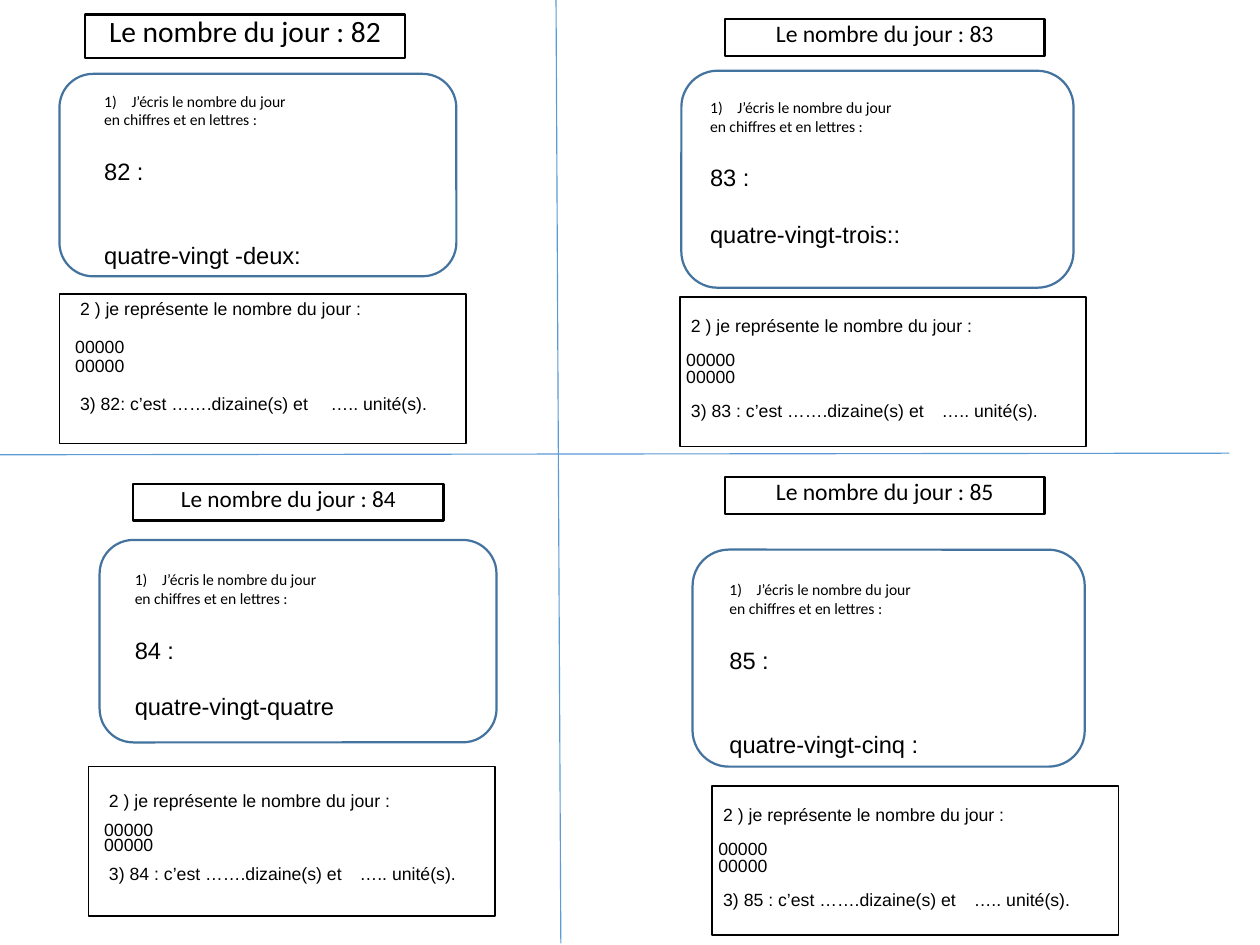
from lxml import etree
from pptx import Presentation
from pptx.dml.color import RGBColor
from pptx.enum.shapes import MSO_CONNECTOR, MSO_SHAPE
from pptx.enum.text import MSO_ANCHOR, PP_ALIGN
from pptx.oxml.ns import qn
from pptx.util import Inches, Pt

BLACK = RGBColor(0x00, 0x00, 0x00)
WHITE = RGBColor(0xFF, 0xFF, 0xFF)
FRAME_BLUE = RGBColor(0x43, 0x73, 0x9E)
DIVIDER_BLUE = RGBColor(0x5B, 0x9B, 0xD5)

CARDS = [
    {"number": 82, "words": "quatre-vingt -deux:", "words_gap": 25,
     "title": (0.53, 0.09, 1.99, 0.27), "title_size": 13.2, "title_spacing": 0.7,
     "title_inset": (0.1, 0.05), "frame": (0.37, 0.46, 2.47, 1.26),
     "writing": (0.55, 0.52, 1.81, 1.05), "box": (0.37, 1.83, 2.53, 0.93),
     "box_spacing": 0.9, "box_inset": (0.1, 0.18), "colon": ":"},
    {"number": 83, "words": "quatre-vingt-trois::", "words_gap": 12.5,
     "title": (4.51, 0.12, 1.99, 0.23), "title_size": 10.6, "title_spacing": 0.9,
     "title_inset": (0.04, 0.02), "frame": (4.24, 0.44, 2.44, 1.35),
     "writing": (4.32, 0.56, 1.81, 0.87), "box": (4.23, 1.85, 2.53, 0.93),
     "box_spacing": 0.8, "box_inset": (0.04, 0.16), "colon": " :"},
    {"number": 84, "words": "quatre-vingt-quatre", "words_gap": 12.5,
     "title": (0.83, 3.01, 1.93, 0.23), "title_size": 10.4, "title_spacing": 0.7,
     "title_inset": (0.1, 0.05), "frame": (0.62, 3.36, 2.47, 1.26),
     "writing": (0.74, 3.5, 1.81, 0.87), "box": (0.55, 4.77, 2.53, 0.93),
     "box_spacing": 0.7, "box_inset": (0.1, 0.2), "colon": " :"},
    {"number": 85, "words": "quatre-vingt-cinq :", "words_gap": 25,
     "title": (4.51, 2.97, 1.99, 0.23), "title_size": 10.6, "title_spacing": 0.9,
     "title_inset": (0.04, 0.02), "frame": (4.31, 3.42, 2.44, 1.35),
     "writing": (4.44, 3.56, 1.81, 1.05), "box": (4.43, 4.89, 2.53, 0.93),
     "box_spacing": 0.8, "box_inset": (0.04, 0.16), "colon": " :"},
]

presentation = Presentation()
presentation.slide_width = Inches(7.84)
presentation.slide_height = Inches(5.88)
slide = presentation.slides.add_slide(presentation.slide_layouts[6])


def add_outline(kind, bounds, color, width, fill=None):
    shape = slide.shapes.add_shape(kind, *[Inches(value) for value in bounds])
    shape.shadow.inherit = False
    if fill is None:
        shape.fill.background()
    else:
        shape.fill.solid()
        shape.fill.fore_color.rgb = fill
    shape.line.color.rgb = color
    shape.line.width = Pt(width)
    return shape


def format_paragraph(paragraph, font_name, size, spacing=1.0, before=0, align=PP_ALIGN.LEFT):
    paragraph.alignment = align
    paragraph.line_spacing = spacing
    paragraph.space_before = Pt(before)
    for run in paragraph.runs:
        run.font.name = font_name
        run.font.size = Pt(size)
        run.font.color.rgb = BLACK


for start_x, start_y, end_x, end_y in [(3.46, 0, 3.49, 5.87), (-0.23, 2.83, 7.65, 2.82)]:
    divider = slide.shapes.add_connector(
        MSO_CONNECTOR.STRAIGHT, Inches(start_x), Inches(start_y), Inches(end_x), Inches(end_y))
    divider.line.color.rgb = DIVIDER_BLUE
    divider.line.width = Pt(0.5)
    etree.SubElement(divider._element.spPr, qn("a:effectLst"))

for card in CARDS:
    number = card["number"]

    title = add_outline(MSO_SHAPE.RECTANGLE, card["title"], BLACK, 1, WHITE)
    title_frame = title.text_frame
    title_frame.vertical_anchor = MSO_ANCHOR.TOP
    side, edge = card["title_inset"]
    title_frame.margin_left = title_frame.margin_right = Inches(side)
    title_frame.margin_top = title_frame.margin_bottom = Inches(edge)
    title_frame.text = f"Le nombre du jour : {number}"
    format_paragraph(title_frame.paragraphs[0], "Calibri", card["title_size"],
                     card["title_spacing"], align=PP_ALIGN.CENTER)

    add_outline(MSO_SHAPE.ROUNDED_RECTANGLE, card["frame"], FRAME_BLUE, 1)

    writing = slide.shapes.add_textbox(*[Inches(value) for value in card["writing"]])
    writing_frame = writing.text_frame
    writing_frame.word_wrap = True
    writing_frame.text = "\n".join([
        "J’écris le nombre du jour", "en chiffres et en lettres :", f"{number} :", card["words"]])
    writing_styles = [("Calibri", 7, 0), ("Calibri", 7, 0),
                      ("Arial", 10.6, 12.5), ("Arial", 10.6, card["words_gap"])]
    for paragraph, (font_name, size, before) in zip(writing_frame.paragraphs, writing_styles):
        format_paragraph(paragraph, font_name, size, before=before)
    numbered = writing_frame.paragraphs[0]._p.get_or_add_pPr()
    numbered.set("marL", str(Inches(0.17)))
    numbered.set("indent", str(Inches(-0.17)))
    etree.SubElement(numbered, qn("a:buAutoNum"), type="arabicParenR")

    box = add_outline(MSO_SHAPE.RECTANGLE, card["box"], BLACK, 0.75)
    box_frame = box.text_frame
    box_frame.vertical_anchor = MSO_ANCHOR.BOTTOM
    side, bottom = card["box_inset"]
    box_frame.margin_left = box_frame.margin_right = Inches(side)
    box_frame.margin_top = Inches(0.02)
    box_frame.margin_bottom = Inches(bottom)
    box_frame.text = "\n".join([
        "2 ) je représente le nombre du jour :", "00000", "00000",
        f"3) {number}{card['colon']} c’est …….dizaine(s) et\t….. unité(s)."])
    spacing = card["box_spacing"]
    blank_line = round(9.5 * spacing, 1)
    for paragraph, before, indent in zip(
            box_frame.paragraphs, [0, blank_line, 0, blank_line], [0.03, 0, 0, 0.03]):
        format_paragraph(paragraph, "Arial", 7.9, spacing, before)
        paragraph._p.get_or_add_pPr().set("marL", str(Inches(indent)))
    tab_list = etree.SubElement(box_frame.paragraphs[3]._p.get_or_add_pPr(), qn("a:tabLst"))
    etree.SubElement(tab_list, qn("a:tab"), pos=str(Inches(1.56)), algn="l")

presentation.save("out.pptx")
